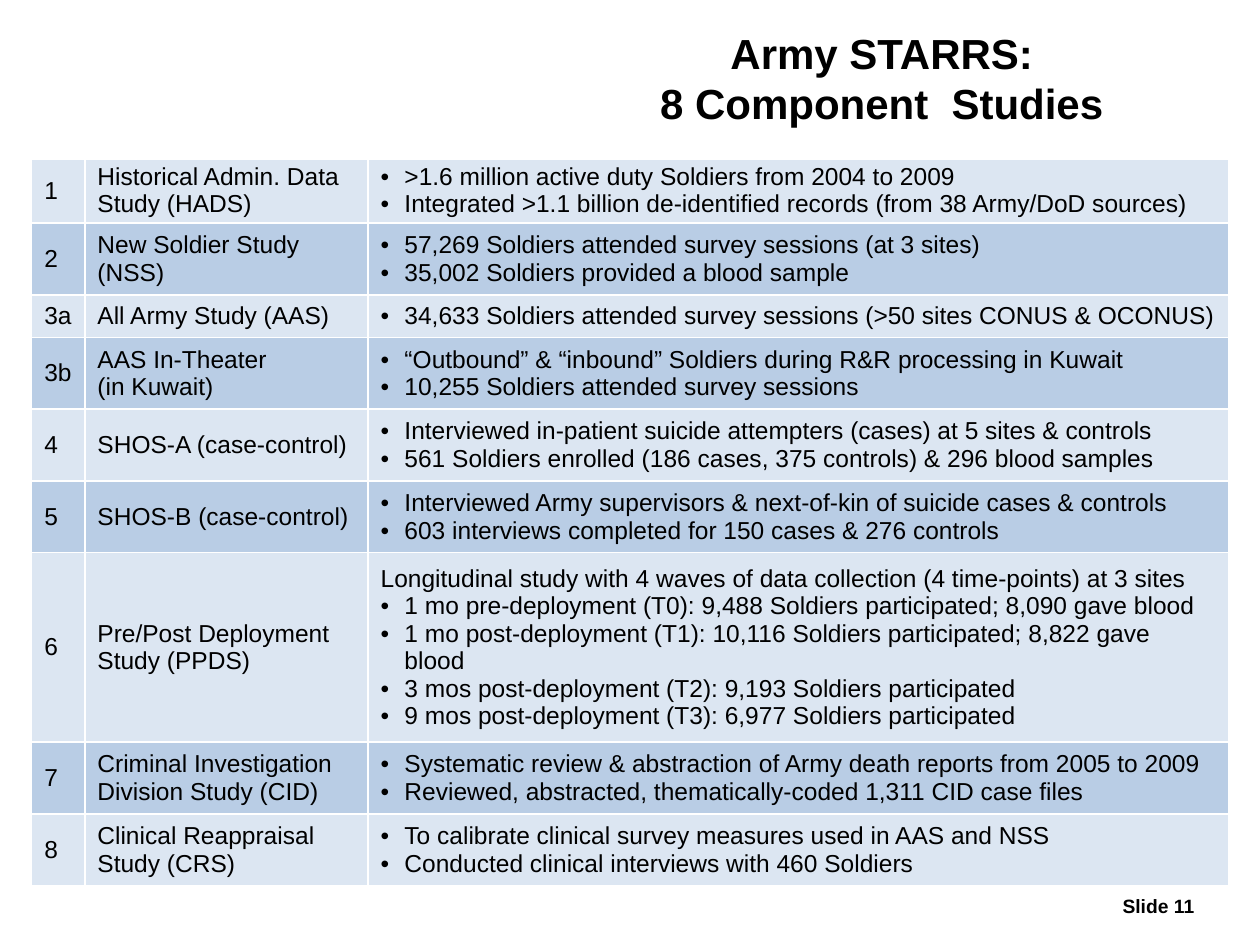
from dataclasses import dataclass
from lxml.etree import SubElement
from pptx import Presentation
from pptx.dml.color import RGBColor
from pptx.enum.text import MSO_ANCHOR, MSO_AUTO_SIZE, PP_ALIGN
from pptx.oxml import parse_xml
from pptx.oxml.ns import nsdecls, qn
from pptx.util import Cm, Pt

HUES = {"text": "000000", "line": "FFFFFF", "light": "DCE6F2", "dark": "B9CDE5"}
FONT = "Arial"
COLS = (1.07, 5.71, 17.35)
DENT = Cm(0.48)


@dataclass
class Study:
    mark: str
    name: list[str]
    facts: list[str]
    lead: str = ""
    height: float = 1.43
    pad: float = 0.13


STUDIES = [
    Study("1", ["Historical Admin. Data Study (HADS)"],
          [">1.6 million active duty Soldiers from 2004 to 2009",
           "Integrated >1.1 billion de-identified records (from 38 Army/DoD sources)"],
          height=1.32, pad=0.05),
    Study("2", ["New Soldier Study (NSS)"],
          ["57,269 Soldiers attended survey sessions (at 3 sites)",
           "35,002 Soldiers provided a blood sample"]),
    Study("3a", ["All Army Study (AAS)"],
          ["34,633 Soldiers attended survey sessions (>50 sites CONUS & OCONUS)"],
          height=0.84),
    Study("3b", ["AAS In-Theater", "(in Kuwait)"],
          ["“Outbound” & “inbound” Soldiers during R&R processing in Kuwait",
           "10,255 Soldiers attended survey sessions"]),
    Study("4", ["SHOS-A (case-control)"],
          ["Interviewed in-patient suicide attempters (cases) at 5 sites & controls",
           "561 Soldiers enrolled (186 cases, 375 controls) & 296 blood samples"]),
    Study("5", ["SHOS-B (case-control)"],
          ["Interviewed Army supervisors & next-of-kin of suicide cases & controls",
           "603 interviews completed for 150 cases & 276 controls"]),
    Study("6", ["Pre/Post Deployment Study (PPDS)"],
          ["1 mo pre-deployment (T0): 9,488 Soldiers participated; 8,090 gave blood",
           "1 mo post-deployment (T1): 10,116 Soldiers participated; 8,822 gave blood",
           "3 mos post-deployment (T2): 9,193 Soldiers participated",
           "9 mos post-deployment (T3): 6,977 Soldiers participated"],
          lead="Longitudinal study with 4 waves of data collection (4 time-points) at 3 sites",
          height=3.18),
    Study("7", ["Criminal Investigation Division Study (CID)"],
          ["Systematic review & abstraction of Army death reports from 2005 to 2009",
           "Reviewed, abstracted, thematically-coded 1,311 CID case files"]),
    Study("8", ["Clinical Reappraisal Study (CRS)"],
          ["To calibrate clinical survey measures used in AAS and NSS",
           "Conducted clinical interviews with 460 Soldiers"]),
]


def add_run(para, text: str, size: float, bold: bool = False) -> None:
    run = para.add_run()
    run.text = text
    run.font.name = FONT
    run.font.size = Pt(size)
    run.font.bold = bold
    run.font.color.rgb = RGBColor.from_string(HUES["text"])


def add_dot(para) -> None:
    props = para._p.get_or_add_pPr()
    props.set("marL", str(DENT))
    props.set("indent", str(-DENT))
    SubElement(props, qn("a:buFont"), typeface=FONT)
    SubElement(props, qn("a:buChar"), char="•")


def add_lines(cell, lines: list[tuple[str, bool]]) -> None:
    frame = cell.text_frame
    for i, (text, dot) in enumerate(lines):
        para = frame.add_paragraph() if i else frame.paragraphs[0]
        if dot:
            add_dot(para)
        add_run(para, text, 14)


def style_cell(cell, hue: str, pad: float, top: float) -> None:
    cell.vertical_anchor = MSO_ANCHOR.MIDDLE
    cell.margin_top = cell.margin_bottom = Cm(pad)
    cell.fill.solid()
    cell.fill.fore_color.rgb = RGBColor.from_string(HUES[hue])
    props = cell._tc.get_or_add_tcPr()
    for i, (side, width) in enumerate((("L", 1), ("R", 1), ("T", top), ("B", 1))):
        props.insert(i, parse_xml(
            f'<a:ln{side} {nsdecls("a")} w="{Pt(width)}"><a:solidFill>'
            f'<a:srgbClr val="{HUES["line"]}"/></a:solidFill></a:ln{side}>'))


def add_title(slide) -> None:
    title = slide.shapes.title
    title.left, title.top = Cm(11.63), Cm(0.43)
    title.width, title.height = Cm(12.29), Cm(2.26)
    frame = title.text_frame
    frame.auto_size = MSO_AUTO_SIZE.NONE
    frame.vertical_anchor = MSO_ANCHOR.MIDDLE
    para = frame.paragraphs[0]
    para.alignment = PP_ALIGN.CENTER
    add_run(para, "Army STARRS:", 24, True)
    para.add_line_break()
    add_run(para, "8 Component  Studies", 24, True)


def add_grid(slide) -> None:
    high = sum(study.height for study in STUDIES)
    table = slide.shapes.add_table(len(STUDIES), len(COLS), Cm(0.64), Cm(3.18),
                                   Cm(sum(COLS)), Cm(high)).table
    table.first_row = table.horz_banding = False
    for col, width in zip(table.columns, COLS):
        col.width = Cm(width)
    for i, study in enumerate(STUDIES):
        row = table.rows[i]
        row.height = Cm(study.height)
        lead = [(study.lead, False)] if study.lead else []
        parts = ([(study.mark, False)],
                 [(line, False) for line in study.name],
                 lead + [(fact, True) for fact in study.facts])
        for cell, lines in zip(row.cells, parts):
            add_lines(cell, lines)
            style_cell(cell, "dark" if i % 2 else "light", study.pad, 1 if i else 3)


def add_number(slide) -> None:
    box = slide.shapes.add_textbox(Cm(16.51), Cm(17.91), Cm(7.82), Cm(0.74))
    frame = box.text_frame
    frame.word_wrap = True
    frame.auto_size = MSO_AUTO_SIZE.SHAPE_TO_FIT_TEXT
    para = frame.paragraphs[0]
    para.alignment = PP_ALIGN.RIGHT
    add_run(para, "Slide 11", 11, True)


def main() -> None:
    deck = Presentation()
    deck.slide_width, deck.slide_height = Cm(25.4), Cm(19.05)
    slide = deck.slides.add_slide(deck.slide_layouts[5])  # title only
    # Slide number, heading, then the table of studies
    add_number(slide)
    add_title(slide)
    add_grid(slide)
    deck.save("out.pptx")


if __name__ == "__main__":
    main()
